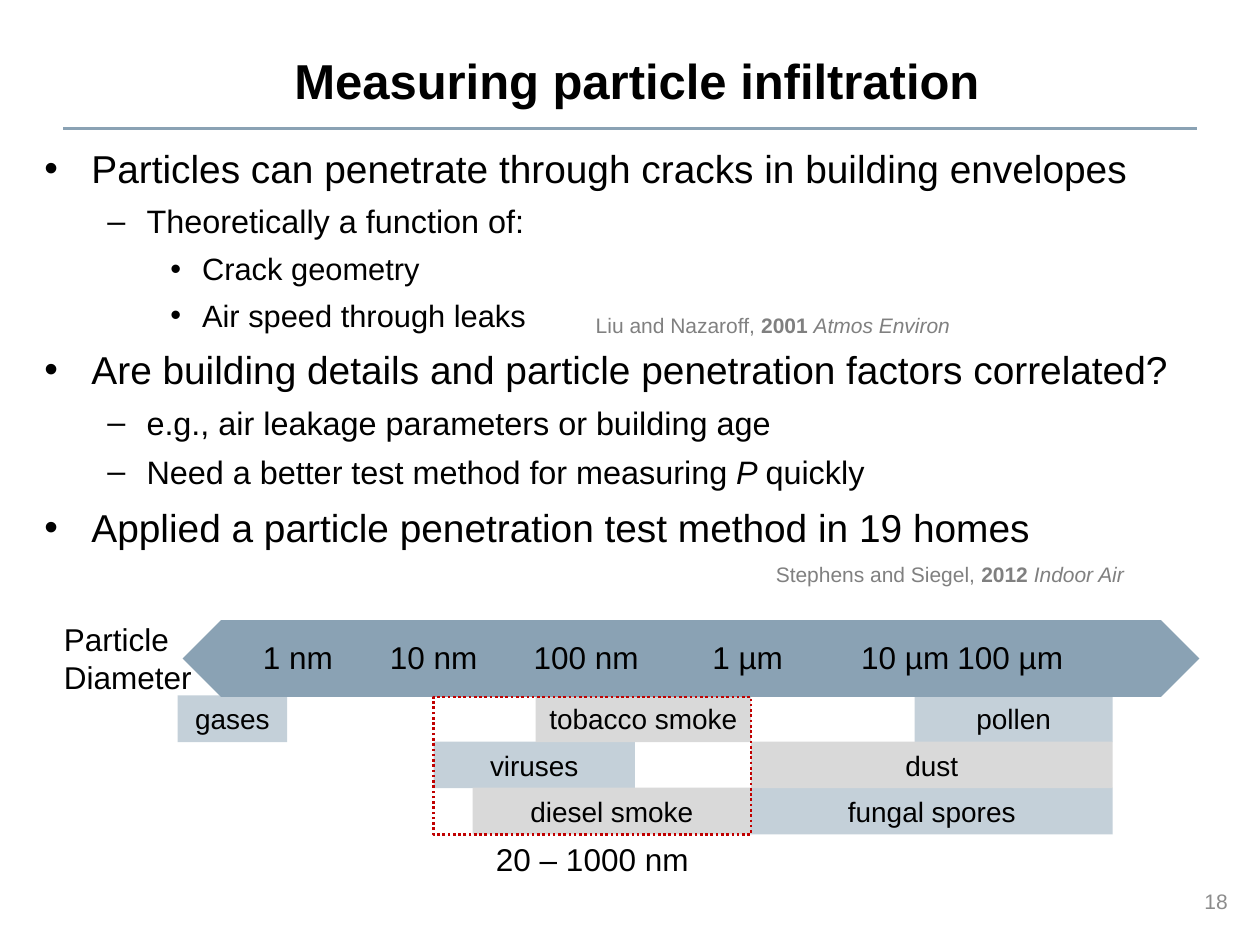
import pptx
import pptx.dml.color
import pptx.enum.dml
import pptx.enum.shapes
import pptx.enum.text
import pptx.oxml
import pptx.oxml.ns
import pptx.util
from pptx.util import Cm, Pt

BLACK = pptx.dml.color.RGBColor(0x00, 0x00, 0x00)
STEEL = pptx.dml.color.RGBColor(0x8A, 0xA2, 0xB4)
SILVER = pptx.dml.color.RGBColor(0xD9, 0xD9, 0xD9)
CITATION_GRAY = pptx.dml.color.RGBColor(0x80, 0x80, 0x80)
NUMBER_GRAY = pptx.dml.color.RGBColor(0x8C, 0x8C, 0x8C)
RED = pptx.dml.color.RGBColor(0xC0, 0x00, 0x00)
ALIGN = pptx.enum.text.PP_ALIGN
ANCHOR = pptx.enum.text.MSO_ANCHOR
SHAPE = pptx.enum.shapes.MSO_SHAPE


def add_runs(paragraph, *runs, size=18, color=BLACK, align=ALIGN.LEFT):
    """Append (text, style) runs, where style holds "b" for bold and "i" for italic."""
    paragraph.alignment = align
    for text, style in runs:
        run = paragraph.add_run()
        run.text = text
        run.font.name = "Arial"
        run.font.size = Pt(size)
        run.font.color.rgb = color
        run.font.bold = "b" in style
        run.font.italic = "i" in style


def add_xml(parent, markup):
    """Append an element of the drawing namespace and return it."""
    tag, _, rest = markup.partition(" ")
    element = pptx.oxml.parse_xml(f"<a:{tag} {pptx.oxml.ns.nsdecls('a')} {rest}/>")
    parent.append(element)
    return element


prs = pptx.Presentation()
prs.slide_width, prs.slide_height = Cm(25.4), Cm(19.05)
slide = prs.slides.add_slide(prs.slide_layouts[1])
shapes = slide.shapes

# Title and rule
title = shapes.title
title.left, title.top, title.width, title.height = Cm(0.66), Cm(0.46), Cm(24.36), Cm(2.31)
title.text_frame.vertical_anchor = ANCHOR.MIDDLE
add_runs(title.text_frame.paragraphs[0], ("Measuring particle infiltration", "b"),
         size=28, align=ALIGN.CENTER)

rule = shapes.add_connector(pptx.enum.shapes.MSO_CONNECTOR.STRAIGHT,
                            Cm(1.27), Cm(2.59), Cm(24.13), Cm(2.59))
rule.line.color.rgb = STEEL
rule.line.width = Pt(1.5)
add_xml(rule._element.spPr, "effectLst")

# Bullet list
body = slide.placeholders[1]
body.left, body.top, body.width, body.height = Cm(0.64), Cm(2.69), Cm(24.41), Cm(8.97)
body.text_frame.auto_size = pptx.enum.text.MSO_AUTO_SIZE.NONE
LEVELS = [  # text size, text indent, hanging indent, bullet
    (22.2, 0.95, 0.95, "•"),
    (18.5, 2.06, 0.79, "–"),
    (17.6, 3.18, 0.64, "•"),
]
points = [
    (0, [("Particles can penetrate through cracks in building envelopes", "")]),
    (1, [("Theoretically a function of:", "")]),
    (2, [("Crack geometry", "")]),
    (2, [("Air speed through leaks", "")]),
    (0, [("Are building details and particle penetration factors correlated?", "")]),
    (1, [("e.g., air leakage parameters or building age", "")]),
    (1, [("Need a better test method for measuring ", ""), ("P ", "i"), ("quickly", "")]),
    (0, [("Applied a particle penetration test method in 19 homes", "")]),
]
for index, (level, runs) in enumerate(points):
    size, indent, hanging, bullet = LEVELS[level]
    point = body.text_frame.add_paragraph() if index else body.text_frame.paragraphs[0]
    point.level = level
    point.line_spacing = 1.1
    point.space_before = Pt(round(size * 0.2, 1) if index else 0)
    properties = point._p.get_or_add_pPr()
    properties.set("marL", str(Cm(indent)))
    properties.set("indent", str(-Cm(hanging)))
    add_xml(properties, f'buChar char="{bullet}"')
    add_runs(point, *runs, size=size)

# Particle types: row, left, width, fill
ROW_TOP, ROW_PITCH = 14.02, 0.93
particles = [
    ("gases", 0, 3.58, 2.21, STEEL),
    ("viruses", 1, 8.74, 4.06, STEEL),
    ("tobacco smoke", 0, 10.8, 4.34, SILVER),
    ("diesel smoke", 2, 9.53, 5.61, SILVER),
    ("fungal spores", 2, 15.14, 7.29, STEEL),
    ("pollen", 0, 18.44, 3.99, STEEL),
    ("dust", 1, 15.14, 7.29, SILVER),
]
for particle, row, left, width, fill in particles:
    bar = shapes.add_shape(SHAPE.RECTANGLE, Cm(left), Cm(ROW_TOP + row * ROW_PITCH),
                           Cm(width), Cm(0.94))
    bar.shadow.inherit = False
    bar.fill.solid()
    bar.fill.fore_color.rgb = fill
    bar.line.fill.background()
    if fill == STEEL:
        add_xml(bar._element.spPr.find(".//" + pptx.oxml.ns.qn("a:srgbClr")),
                'alpha val="50000"')
    bar.text_frame.word_wrap = False
    add_runs(bar.text_frame.paragraphs[0], (particle, ""), size=16, align=ALIGN.CENTER)

# Double-headed diameter scale
for left, rotation in [(12.14, 0), (3.68, 180)]:
    arrow = shapes.add_shape(SHAPE.PENTAGON, Cm(left), Cm(12.5), Cm(12.04), Cm(1.55))
    arrow.rotation = rotation
    arrow.shadow.inherit = False
    arrow.fill.solid()
    arrow.fill.fore_color.rgb = STEEL
    arrow.line.fill.background()

scale = shapes.add_textbox(Cm(5.05), Cm(12.73), Cm(18.24), Cm(1.02))
scale.text_frame.word_wrap = True
diameters = scale.text_frame.paragraphs[0]
tab_stops = add_xml(diameters._p.get_or_add_pPr(), "tabLst")
for position in [2.56, 5.46, 9.06, 12.06, 14.0]:
    add_xml(tab_stops, f'tab pos="{Cm(position)}" algn="l"')
add_runs(diameters, ("1 nm\t10 nm\t100 nm\t1 µm\t10 µm\t100 µm", ""))

# Measured range
measured = shapes.add_shape(SHAPE.RECTANGLE, Cm(8.74), Cm(14.05), Cm(6.4), Cm(2.77))
measured.shadow.inherit = False
measured.fill.background()
measured.line.color.rgb = RED
measured.line.width = Pt(1.5)
measured.line.dash_style = pptx.enum.dml.MSO_LINE.ROUND_DOT

# Captions, citations and slide number
captions = [
    (1.04, 12.37, 3.12, 1.8, [[("Particle", "")], [("Diameter", "")]], {}),
    (8.74, 16.81, 6.4, 1.02, [[("20 – 1000 nm", "")]], {"align": ALIGN.CENTER}),
    (11.76, 6.17, 7.82, 0.76,
     [[("Liu and Nazaroff, ", ""), ("2001 ", "b"), ("Atmos Environ", "i")]],
     {"size": 12, "color": CITATION_GRAY}),
    (15.39, 11.2, 7.7, 0.76,
     [[("Stephens and Siegel, ", ""), ("2012 ", "b"), ("Indoor Air", "i")]],
     {"size": 12, "color": CITATION_GRAY}),
    (19.08, 17.65, 5.92, 1.02, [[("18", "")]],
     {"size": 12, "color": NUMBER_GRAY, "align": ALIGN.RIGHT}),
]
for left, top, width, height, lines, text_format in captions:
    caption = shapes.add_textbox(Cm(left), Cm(top), Cm(width), Cm(height))
    caption.text_frame.word_wrap = True
    caption.text_frame.vertical_anchor = ANCHOR.MIDDLE
    for index, runs in enumerate(lines):
        line = caption.text_frame.add_paragraph() if index else caption.text_frame.paragraphs[0]
        add_runs(line, *runs, **text_format)

prs.save("out.pptx")
